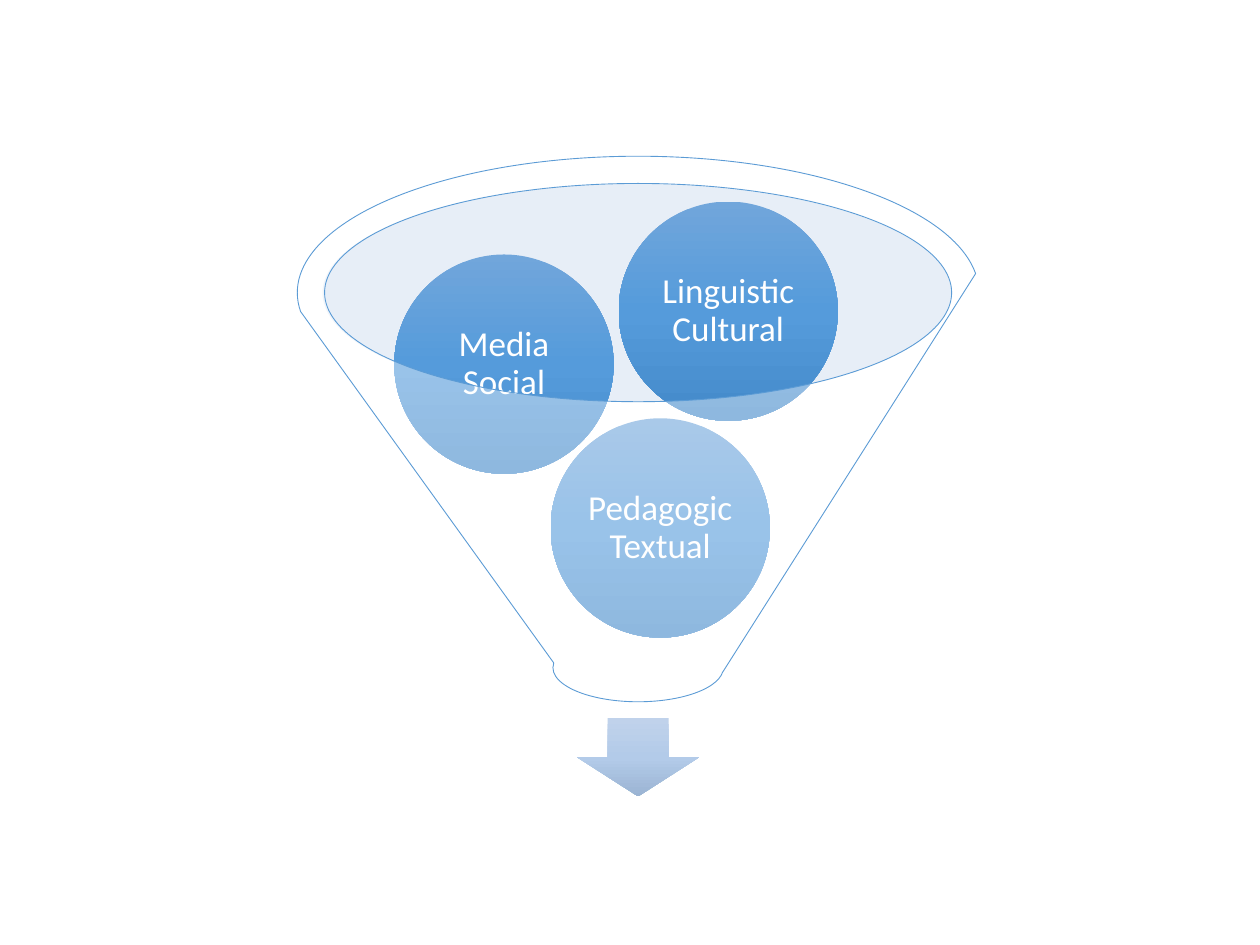
from copy import deepcopy
from dataclasses import dataclass
from math import sqrt

from lxml.etree import SubElement
from pptx import Presentation
from pptx.dml.color import RGBColor as RGB
from pptx.enum.shapes import MSO_SHAPE as Shape
from pptx.enum.text import MSO_ANCHOR as Anchor, PP_ALIGN as Align
from pptx.oxml.ns import qn
from pptx.util import Inches, Pt


@dataclass(frozen=True)
class Theme:
    font: str = "Calibri"
    size: int = 20
    text: str = "FFFFFF"
    mouth: str = "C4D5EB"
    glass: str = "FFFFFF"
    outline: str = "5B9BD5"
    opacity: int = 40
    ball: tuple[str, ...] = ("71A6DB", "559BDB", "448ACA")
    arrow: tuple[str, ...] = ("C0D2EB", "B3CBE9", "9BB4D3")


@dataclass(frozen=True)
class Box:
    """A rectangle on a grid of 100 columns by 75 rows."""
    col: float
    row: float
    cols: float
    rows: float

    def emu(self) -> list[int]:
        return [Inches(v * CELL) for v in (self.col, self.row, self.cols, self.rows)]


@dataclass(frozen=True)
class Ball:
    label: str
    col: float
    row: float


THEME = Theme()
CELL = 0.1  # inches per grid cell
DIAMETER = 17.4
BALLS = (
    Ball("Pedagogic Textual", 43.7, 33.2),
    Ball("Media Social", 31.3, 20.2),
    Ball("Linguistic Cultural", 49.1, 16),
)


def add_plain(s, kind: Shape, box: Box):
    sp = s.shapes.add_shape(kind, *box.emu())
    sp.shadow.inherit = False
    sp.line.fill.background()
    return sp


def fill_glass(sp, color: str) -> None:
    sp.fill.solid()
    sp.fill.fore_color.rgb = RGB.from_string(color)
    clr = sp.fill._xPr.find(qn("a:solidFill"))[0]
    SubElement(clr, qn("a:alpha"), val=str(THEME.opacity * 1000))


def fill_gradient(sp, colors: tuple[str, ...]) -> None:
    sp.fill.gradient()
    sp.fill.gradient_angle = 270  # counter-clockwise, so top to bottom
    stops = sp.fill._xPr.find(qn("a:gradFill")).find(qn("a:gsLst"))
    stops.append(deepcopy(stops[0]))
    for i, (stop, color) in enumerate(zip(sp.fill.gradient_stops, colors)):
        stop.position = i / (len(colors) - 1)
        stop.color.rgb = RGB.from_string(color)


def add_ball(s, ball: Ball) -> None:
    sp = add_plain(s, Shape.OVAL, Box(ball.col, ball.row, DIAMETER, DIAMETER))
    fill_gradient(sp, THEME.ball)

    # Label in the square inscribed in the circle
    side = DIAMETER / sqrt(2)
    inset = (DIAMETER - side) / 2
    tf = s.shapes.add_textbox(*Box(ball.col + inset, ball.row + inset, side, side).emu()).text_frame
    tf.word_wrap = True
    tf.vertical_anchor = Anchor.MIDDLE
    tf.margin_left = tf.margin_top = tf.margin_right = tf.margin_bottom = Inches(0.03)
    p = tf.paragraphs[0]
    p.alignment = Align.CENTER
    p.line_spacing = 0.9
    p.space_after = Pt(0.35 * THEME.size)
    r = p.add_run()
    r.text = ball.label
    r.font.name = THEME.font
    r.font.size = Pt(THEME.size)
    r.font.color.rgb = RGB.from_string(THEME.text)


def main() -> None:
    prs = Presentation()
    prs.slide_width, prs.slide_height = Inches(10), Inches(7.5)
    s = prs.slides.add_slide(prs.slide_layouts[6])

    # Funnel mouth and outflow arrow
    fill_glass(add_plain(s, Shape.OVAL, Box(25.6, 14.6, 49.9, 17.3)), THEME.mouth)
    fill_gradient(add_plain(s, Shape.DOWN_ARROW, Box(45.8, 57, 9.7, 6.2)), THEME.arrow)

    # Balls falling through the funnel
    for ball in BALLS:
        add_ball(s, ball)

    # Translucent funnel in front
    funnel = add_plain(s, Shape.FUNNEL, Box(23.6, 12.4, 54.1, 43.3))
    fill_glass(funnel, THEME.glass)
    funnel.line.color.rgb = RGB.from_string(THEME.outline)
    funnel.line.width = Pt(0.5)

    prs.save("out.pptx")


if __name__ == "__main__":
    main()
